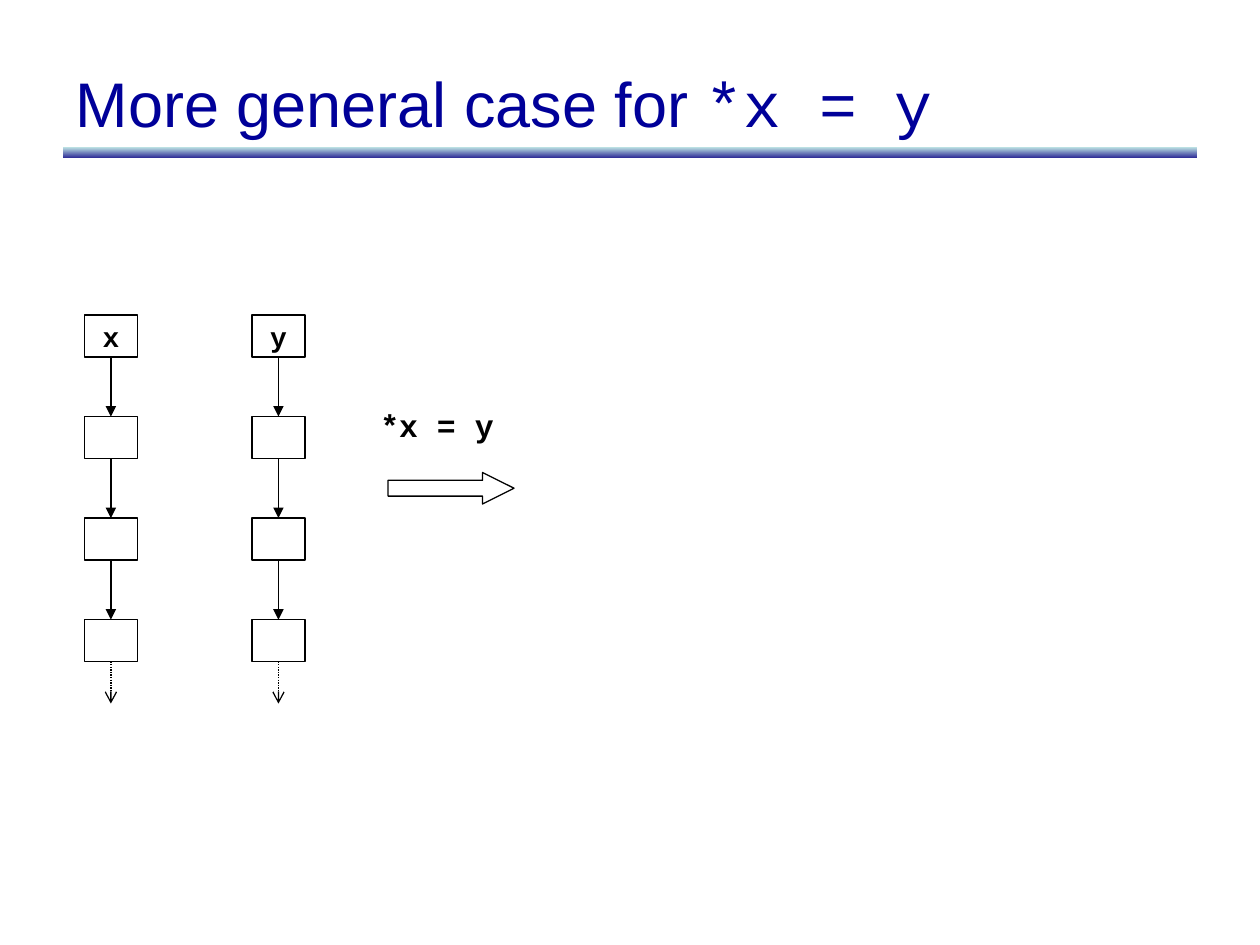
from dataclasses import dataclass

from pptx import Presentation
from pptx.dml.color import RGBColor
from pptx.enum.dml import MSO_LINE
from pptx.enum.shapes import MSO_CONNECTOR, MSO_SHAPE
from pptx.enum.text import MSO_ANCHOR, MSO_AUTO_SIZE, PP_ALIGN
from pptx.oxml.ns import qn
from pptx.util import Inches, Pt
from lxml.etree import SubElement


@dataclass(frozen=True)
class Theme:
    ink: RGBColor = RGBColor(0, 0, 0)
    title: RGBColor = RGBColor(0x00, 0x00, 0x99)
    bar_top: RGBColor = RGBColor(0xBB, 0xE0, 0xE3)
    bar_bottom: RGBColor = RGBColor(0x33, 0x33, 0x99)
    sans: str = "Arial"
    mono: str = "Courier New"
    title_size: int = 36
    label_size: int = 18
    node_size: int = 16
    line_width: float = 0.75


@dataclass(frozen=True)
class Chain:
    name: str
    column: int


# Grid of the pointer chains, in inches
LEFT, COLUMN = 0.67, 1.33
TOP, ROW = 2.5, 0.806
NODE_W, NODE_H = 0.42, 0.333
NODES = 4
MARGIN, CONTENT_W = 0.5, 9
STATEMENT = "*x = y"
CHAINS = [Chain("x", 0), Chain("y", 1)]
THEME = Theme()


def add_text(p, text: str, *, font: str, size: int, color: RGBColor,
             bold: bool = False, align=None) -> None:
    r = p.add_run()
    r.text = text
    r.font.name, r.font.size, r.font.bold = font, Pt(size), bold
    r.font.color.rgb = color
    p.alignment = align


def add_outline(slide, kind, x: float, y: float, w: float, h: float):
    sp = slide.shapes.add_shape(kind, Inches(x), Inches(y), Inches(w), Inches(h))
    sp.shadow.inherit = False
    sp.fill.background()
    sp.line.color.rgb = THEME.ink
    sp.line.width = Pt(THEME.line_width)
    return sp


def add_pointer(slide, x: float, y1: float, y2: float, *,
                head: str = "triangle", dash=None) -> None:
    line = slide.shapes.add_connector(
        MSO_CONNECTOR.STRAIGHT, Inches(x), Inches(y1), Inches(x), Inches(y2))
    line.line.color.rgb = THEME.ink
    line.line.width = Pt(THEME.line_width)
    if dash:
        line.line.dash_style = dash
    SubElement(line.line._get_or_add_ln(), qn("a:tailEnd"), type=head)
    SubElement(line._element.spPr, qn("a:effectLst"))


def add_chain(slide, chain: Chain) -> None:
    x = LEFT + chain.column * COLUMN
    middle = x + NODE_W / 2
    for row in range(NODES):
        y = TOP + row * ROW
        bottom = y + NODE_H
        sp = add_outline(slide, MSO_SHAPE.RECTANGLE, x, y, NODE_W, NODE_H)
        if row == 0:
            tf = sp.text_frame
            tf.word_wrap = False
            tf.vertical_anchor = MSO_ANCHOR.MIDDLE
            add_text(tf.paragraphs[0], chain.name, font=THEME.mono,
                     size=THEME.node_size, color=THEME.ink, bold=True,
                     align=PP_ALIGN.CENTER)
        if row < NODES - 1:
            add_pointer(slide, middle, bottom, y + ROW)
        else:
            add_pointer(slide, middle, bottom, bottom + NODE_H,
                        head="arrow", dash=MSO_LINE.ROUND_DOT)


def add_title_bar(slide) -> None:
    bar = add_outline(slide, MSO_SHAPE.RECTANGLE, MARGIN, 1.17, CONTENT_W, 0.08)
    bar.line.fill.background()
    bar.fill.gradient()
    bar.fill.gradient_angle = 270
    for stop, position, color in zip(bar.fill.gradient_stops, (0, 1),
                                     (THEME.bar_top, THEME.bar_bottom)):
        stop.position, stop.color.rgb = position, color


def add_title(slide) -> None:
    title = slide.shapes.title
    title.left, title.top = Inches(MARGIN), Inches(0.3)
    title.width, title.height = Inches(CONTENT_W), Inches(1.03)
    tf = title.text_frame
    tf.auto_size = MSO_AUTO_SIZE.NONE
    tf.vertical_anchor = MSO_ANCHOR.MIDDLE
    for text, font in (("More general case for ", THEME.sans),
                       (STATEMENT, THEME.mono)):
        add_text(tf.paragraphs[0], text, font=font, size=THEME.title_size,
                 color=THEME.title, align=PP_ALIGN.LEFT)


def add_statement(slide) -> None:
    box = slide.shapes.add_textbox(Inches(2.92), Inches(3.17), Inches(1.1), Inches(0.4))
    tf = box.text_frame
    tf.word_wrap = False
    tf.auto_size = MSO_AUTO_SIZE.SHAPE_TO_FIT_TEXT
    add_text(tf.paragraphs[0], STATEMENT, font=THEME.mono, size=THEME.label_size,
             color=THEME.ink, bold=True, align=PP_ALIGN.LEFT)
    arrow = add_outline(slide, MSO_SHAPE.RIGHT_ARROW, 3.08, 3.75, 1, 0.25)
    arrow.adjustments[0], arrow.adjustments[1] = 0.5, 1


def main() -> None:
    prs = Presentation()
    prs.slide_width, prs.slide_height = Inches(10), Inches(7.5)
    slide = prs.slides.add_slide(prs.slide_layouts[5])

    # Heading
    add_title_bar(slide)
    add_title(slide)

    # Pointer chains before the assignment
    for chain in CHAINS:
        add_chain(slide, chain)

    # Assignment and its arrow
    add_statement(slide)
    prs.save("out.pptx")


if __name__ == "__main__":
    main()
